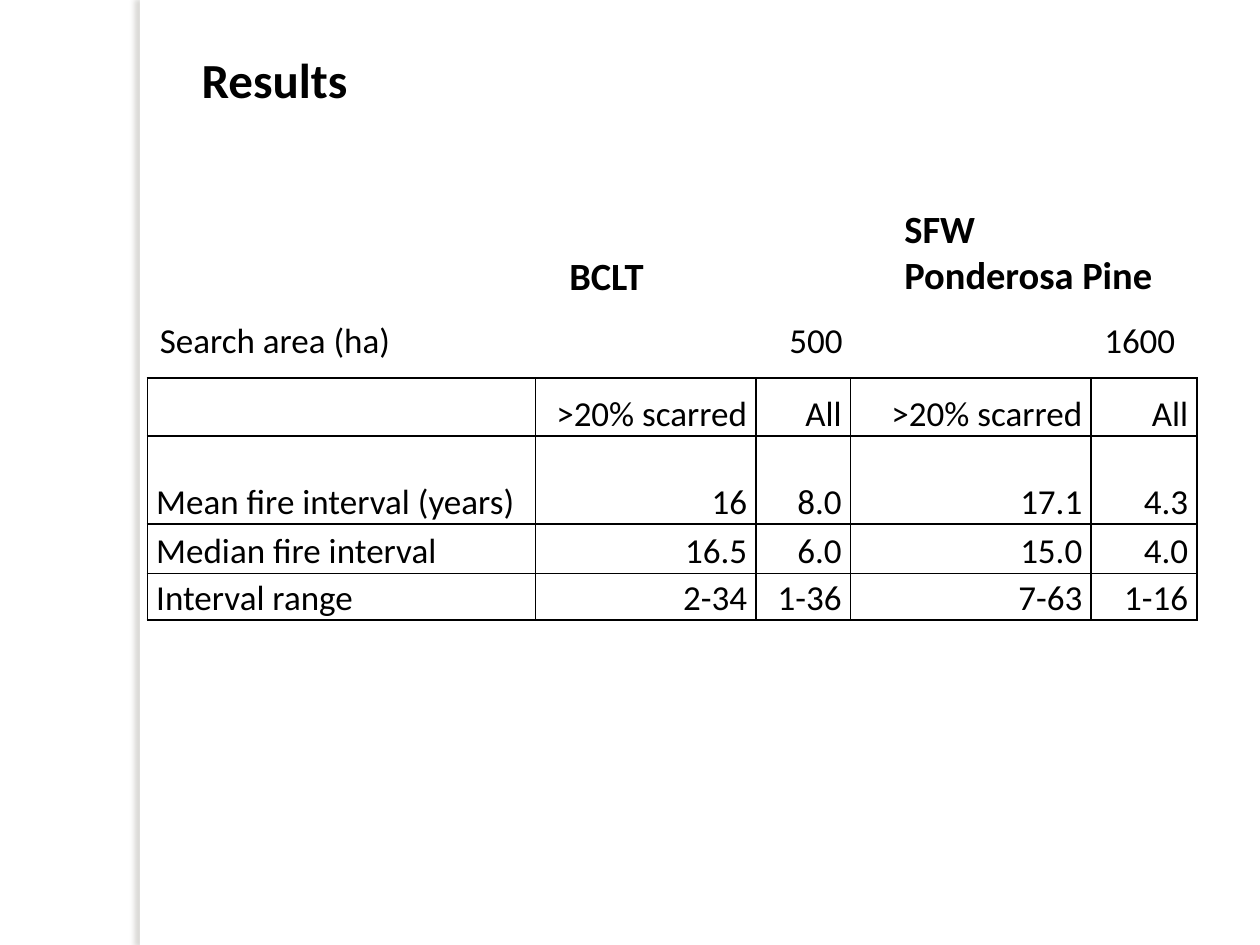
from lxml import etree
from pptx import Presentation
from pptx.dml.color import RGBColor
from pptx.enum.shapes import MSO_SHAPE as Shape
from pptx.enum.text import MSO_ANCHOR as Anchor, MSO_AUTO_SIZE as AutoSize, PP_ALIGN as Align
from pptx.oxml.ns import qn
from pptx.util import Inches, Pt

COLORS = {"text": "000000", "line": "000000", "paper": "FFFFFF", "shadow": "736F63"}
COL_WIDTHS = [3.08, 1.75, 0.75, 1.91, 0.84]
ROW_HEIGHTS = [0.46, 0.7, 0.39, 0.37]
FIRE_INTERVALS = [
    ["", ">20% scarred", "All", ">20% scarred", "All"],
    ["Mean fire interval (years)", "16", "8.0", "17.1", "4.3"],
    ["Median fire interval", "16.5", "6.0", "15.0", "4.0"],
    ["Interval range", "2-34", "1-36", "7-63", "1-16"],
]


def add_color(parent, name):
    return etree.SubElement(parent, qn("a:srgbClr"), val=COLORS[name])


class ResultsSlide:
    font = "Calibri"

    def __init__(self, prs):
        self.slide = prs.slides.add_slide(prs.slide_layouts[5])

    def add_text(self, p, text, size, bold=False):
        r = p.add_run()
        r.text = text
        r.font.name, r.font.size, r.font.bold = self.font, Pt(size), bold
        r.font.color.rgb = RGBColor.from_string(COLORS["text"])

    def title(self, text, box):
        sp = self.slide.shapes.title
        sp.left, sp.top, sp.width, sp.height = map(Inches, box)
        tf = sp.text_frame
        tf.auto_size, tf.vertical_anchor = AutoSize.NONE, Anchor.TOP
        tf.paragraphs[0].alignment = Align.LEFT
        self.add_text(tf.paragraphs[0], text, 28, True)

    def side_strip(self, box):
        """Draw the white strip that casts a soft shadow to the left."""
        sp = self.slide.shapes.add_shape(Shape.RECTANGLE, *map(Inches, box))
        sp.fill.solid()
        sp.fill.fore_color.rgb = RGBColor.from_string(COLORS["paper"])
        sp.line.fill.background()
        sp.shadow.inherit = False
        effects = sp._element.spPr.find(qn("a:effectLst"))
        shadow = etree.SubElement(effects, qn("a:outerShdw"), blurRad=str(Pt(3)),
                                  dist=str(Pt(3)), dir="10800000", rotWithShape="0")
        etree.SubElement(add_color(shadow, "shadow"), qn("a:alpha"), val="25000")

    def label(self, lines, box, size, bold=False, wrap=True, right_tabs=()):
        tf = self.slide.shapes.add_textbox(*map(Inches, box)).text_frame
        tf.word_wrap = wrap
        for i, line in enumerate(lines):
            p = tf.add_paragraph() if i else tf.paragraphs[0]
            if right_tabs:
                tabs = etree.SubElement(p._p.get_or_add_pPr(), qn("a:tabLst"))
                for pos in right_tabs:
                    etree.SubElement(tabs, qn("a:tab"), pos=str(Inches(pos)), algn="r")
            self.add_text(p, line, size, bold)

    def cell_borders(self, cell):
        tcPr = cell._tc.get_or_add_tcPr()
        for i, side in enumerate(("lnL", "lnR", "lnT", "lnB")):
            ln = etree.Element(qn(f"a:{side}"), w=str(Pt(1)))
            add_color(etree.SubElement(ln, qn("a:solidFill")), "line")
            tcPr.insert(i, ln)

    def table(self, rows, left, top):
        width, height = Inches(sum(COL_WIDTHS)), Inches(sum(ROW_HEIGHTS))
        table = self.slide.shapes.add_table(len(rows), len(rows[0]), Inches(left),
                                            Inches(top), width, height).table
        table.first_row = table.horz_banding = False
        for column, w in zip(table.columns, COL_WIDTHS):
            column.width = Inches(w)
        for row, h, values in zip(table.rows, ROW_HEIGHTS, rows):
            row.height = Inches(h)
            for i, (cell, value) in enumerate(zip(row.cells, values)):
                cell.margin_left = cell.margin_right = Inches(0.07)
                cell.margin_top = cell.margin_bottom = 0
                cell.vertical_anchor = Anchor.BOTTOM
                cell.fill.background()
                self.cell_borders(cell)
                p = cell.text_frame.paragraphs[0]
                p.alignment = Align.RIGHT if i else Align.LEFT
                if value:
                    self.add_text(p, value, 20)


def main():
    prs = Presentation()
    prs.slide_width, prs.slide_height = Inches(10), Inches(7.5)
    s = ResultsSlide(prs)
    s.title("Results", (1.5, 0.34, 1.92, 0.57))
    s.side_strip((1.11, 0, 0.08, 7.5))
    s.table(FIRE_INTERVALS, 1.17, 3)
    s.label(["Search area (ha)\t500\t1600"], (1.17, 2.48, 8.58, 0.44), 20,
            right_tabs=(5.42, 8.06))
    s.label(["BCLT"], (4.42, 1.95, 1.03, 0.47), 22, bold=True, wrap=False)
    s.label(["SFW", "Ponderosa Pine"], (7.08, 1.58, 2.83, 0.84), 22, bold=True)
    prs.save("out.pptx")


if __name__ == "__main__":
    main()
